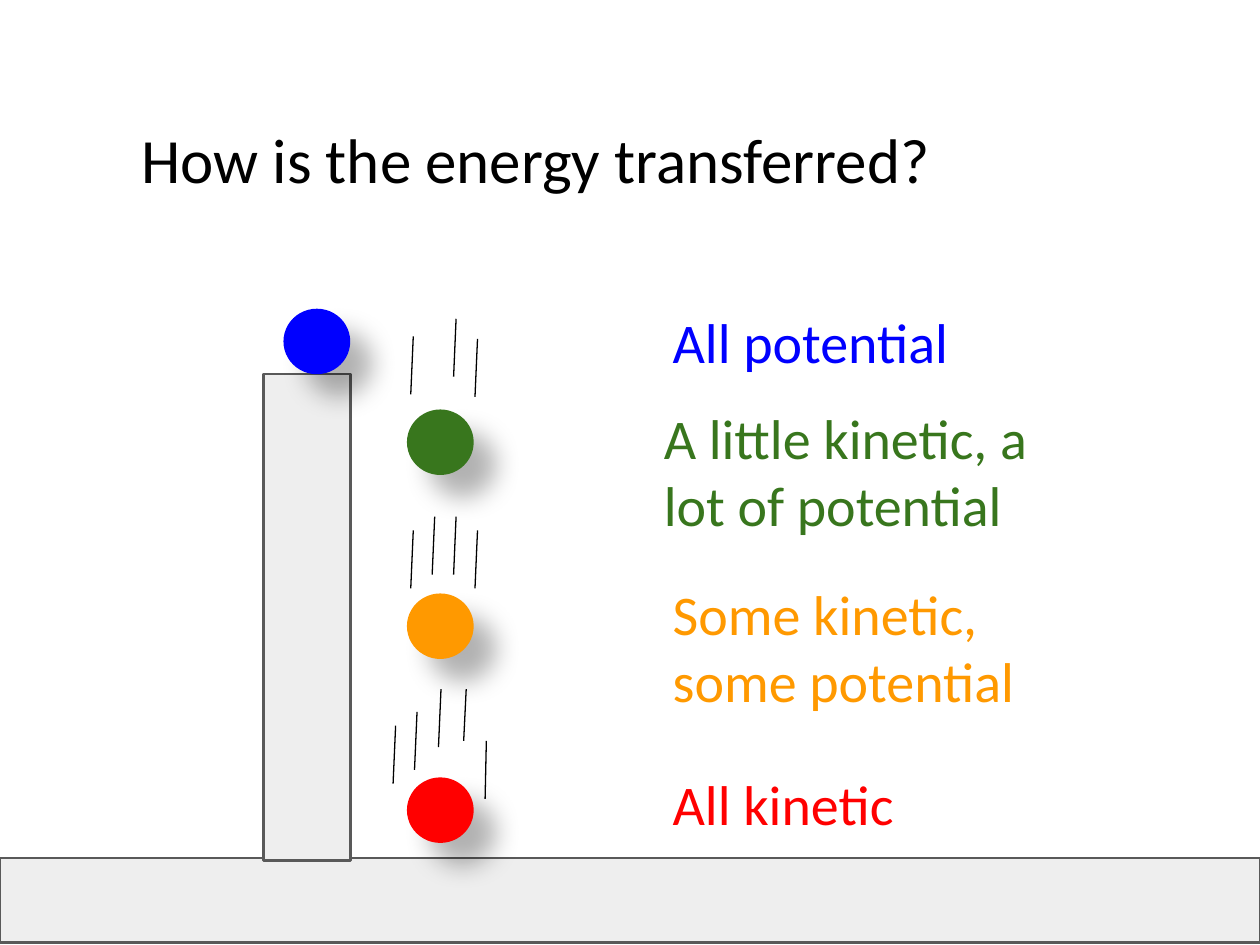
from dataclasses import dataclass

from lxml.etree import SubElement
from pptx import Presentation
from pptx.dml.color import RGBColor
from pptx.enum.shapes import MSO_CONNECTOR, MSO_SHAPE
from pptx.enum.text import MSO_ANCHOR, MSO_AUTO_SIZE, PP_ALIGN
from pptx.oxml.ns import qn
from pptx.shapes.autoshape import Shape
from pptx.slide import Slide
from pptx.util import Inches, Pt


@dataclass(frozen=True)
class Theme:
    font: str = "Calibri"
    title_size: int = 36
    label_size: int = 32
    ink: str = "000000"
    surface: str = "EEEEEE"
    outline: str = "595959"
    potential: str = "0000FF"
    mostly_potential: str = "38761D"
    mixed: str = "FF9900"
    kinetic: str = "FF0000"


@dataclass(frozen=True)
class Area:
    left: float
    top: float
    width: float
    height: float

    def lengths(self) -> tuple:
        return tuple(map(Inches, (self.left, self.top, self.width, self.height)))


@dataclass(frozen=True)
class Streak:
    left: float
    top: float
    height: float = 0.46
    lean: float = 0.02


@dataclass(frozen=True)
class Stage:
    color: str
    ball_left: float
    ball_top: float
    label: str
    label_area: Area
    streaks: tuple[Streak, ...] = ()


THEME = Theme()
BALL_WIDTH, BALL_HEIGHT = 0.53, 0.52
FALL_LEFT, FALL_TOP, FALL_STEP = 3.23, 3.25, 1.46

STAGES = (
    Stage(THEME.potential, 2.25, 2.45, "All potential", Area(5.24, 2.34, 3.07, 0.67)),
    Stage(
        THEME.mostly_potential, FALL_LEFT, FALL_TOP,
        "A little kinetic, a lot of potential", Area(5.17, 3.1, 3.14, 1.13),
        (Streak(3.26, 2.67), Streak(3.6, 2.53), Streak(3.77, 2.69)),
    ),
    Stage(
        THEME.mixed, FALL_LEFT, FALL_TOP + FALL_STEP,
        "Some kinetic, some potential", Area(5.24, 4.5, 2.95, 1.24),
        (Streak(3.26, 4.21), Streak(3.43, 4.1), Streak(3.6, 4.1), Streak(3.77, 4.21)),
    ),
    Stage(
        THEME.kinetic, FALL_LEFT, FALL_TOP + 2 * FALL_STEP,
        "All kinetic", Area(5.24, 6.01, 2.37, 0.67),
        (
            Streak(3.12, 5.76), Streak(3.29, 5.65), Streak(3.48, 5.47),
            Streak(3.68, 5.47, height=0.41), Streak(3.85, 5.88, lean=0.01),
        ),
    ),
)


def write_text(box: Shape, text: str, *, size: int, color: str) -> None:
    frame = box.text_frame
    frame.word_wrap = True
    frame.auto_size = MSO_AUTO_SIZE.NONE
    frame.vertical_anchor = MSO_ANCHOR.TOP
    frame.margin_left = frame.margin_right = Inches(0.1)
    frame.margin_top = frame.margin_bottom = Inches(0.1)
    para = frame.paragraphs[0]
    para.alignment = PP_ALIGN.LEFT
    span = para.add_run()
    span.text = text
    span.font.name = THEME.font
    span.font.size = Pt(size)
    span.font.color.rgb = RGBColor.from_string(color)


def add_title(page: Slide, text: str, area: Area) -> None:
    title = page.shapes.title
    title.left, title.top, title.width, title.height = area.lengths()
    write_text(title, text, size=THEME.title_size, color=THEME.ink)


def add_filled(page: Slide, kind: MSO_SHAPE, area: Area, color: str) -> Shape:
    shape = page.shapes.add_shape(kind, *area.lengths())
    shape.shadow.inherit = False
    shape.fill.solid()
    shape.fill.fore_color.rgb = RGBColor.from_string(color)
    shape.line.fill.background()
    return shape


def add_block(page: Slide, area: Area) -> None:
    block = add_filled(page, MSO_SHAPE.RECTANGLE, area, THEME.surface)
    block.line.color.rgb = RGBColor.from_string(THEME.outline)
    block.line.width = Pt(1.5)


def add_ball(page: Slide, stage: Stage) -> None:
    area = Area(stage.ball_left, stage.ball_top, BALL_WIDTH, BALL_HEIGHT)
    ball = add_filled(page, MSO_SHAPE.OVAL, area, stage.color)
    effects = ball._element.spPr.find(qn("a:effectLst"))
    shadow = SubElement(
        effects, qn("a:outerShdw"), blurRad=str(Pt(15)), dist=str(Pt(18)),
        dir=str(45 * 60000), algn="bl", rotWithShape="0",
    )
    tint = SubElement(shadow, qn("a:srgbClr"), val=THEME.ink)
    SubElement(tint, qn("a:alpha"), val="30000")


def add_label(page: Slide, stage: Stage) -> None:
    box = page.shapes.add_textbox(*stage.label_area.lengths())
    write_text(box, stage.label, size=THEME.label_size, color=stage.color)


def add_streak(page: Slide, streak: Streak) -> None:
    line = page.shapes.add_connector(
        MSO_CONNECTOR.STRAIGHT,
        Inches(streak.left), Inches(streak.top + streak.height),
        Inches(streak.left + streak.lean), Inches(streak.top),
    )
    line.line.color.rgb = RGBColor.from_string(THEME.ink)
    line.line.width = Pt(0.75)
    SubElement(line._element.spPr, qn("a:effectLst"))


def main() -> None:
    deck = Presentation()
    deck.slide_width, deck.slide_height = Inches(10), Inches(7.5)
    page = deck.slides.add_slide(deck.slide_layouts.get_by_name("Title Only"))
    add_title(page, "How is the energy transferred?", Area(1.02, 0.86, 7.16, 0.99))
    add_block(page, Area(0, 6.81, 10, 0.67))
    add_block(page, Area(2.09, 2.97, 0.69, 3.86))
    for stage in STAGES:
        add_ball(page, stage)
        add_label(page, stage)
        for streak in stage.streaks:
            add_streak(page, streak)
    deck.save("out.pptx")


if __name__ == "__main__":
    main()
